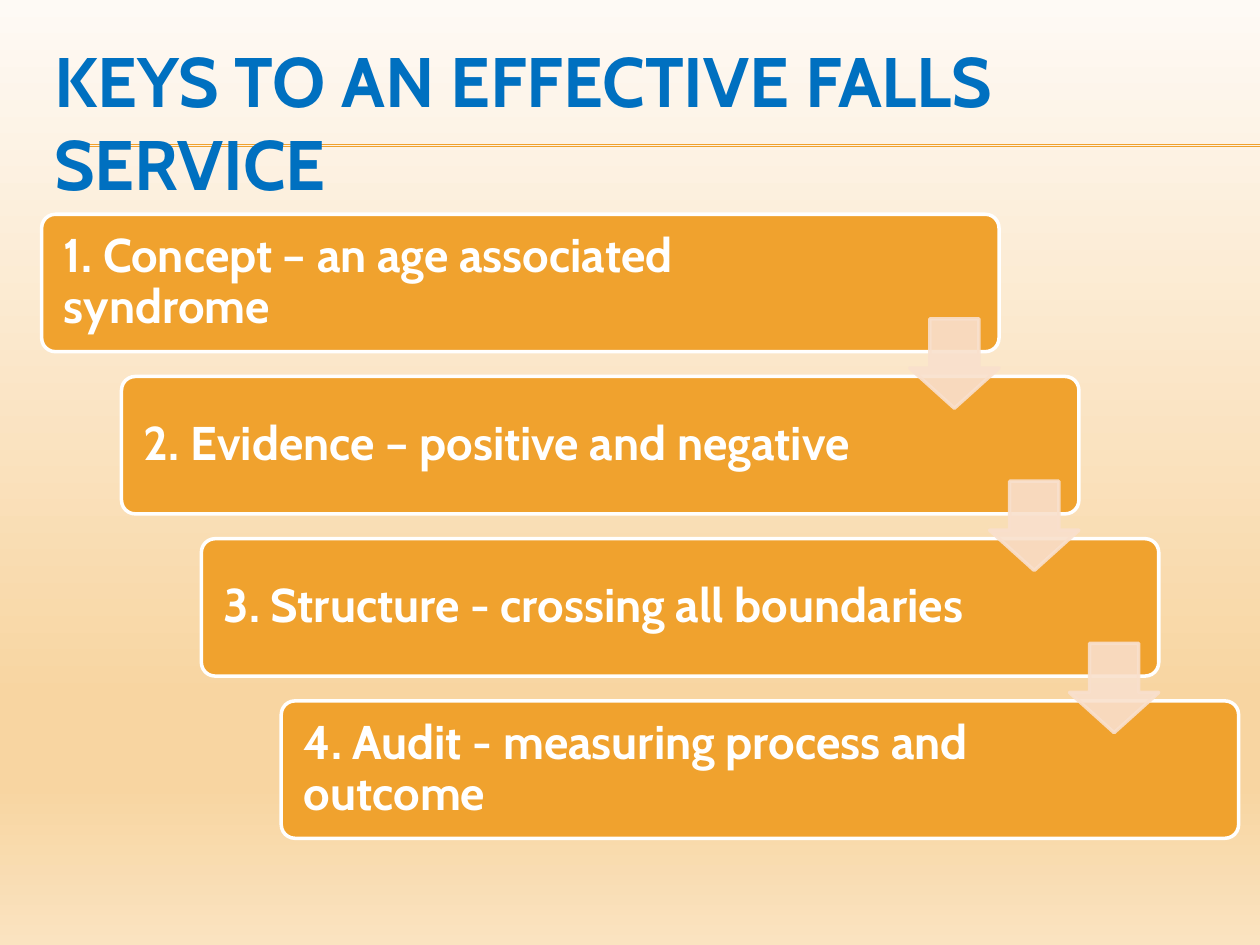
from lxml import etree
from pptx import Presentation
from pptx.dml.color import RGBColor
from pptx.enum import shapes, text
from pptx.oxml import ns
from pptx.util import Cm, Pt

TITLE = "KEYS TO AN EFFECTIVE FALLS SERVICE"
KEYS = [
    "1. Concept – an age associated syndrome",
    "2. Evidence – positive and negative",
    "3. Structure - crossing all boundaries",
    "4. Audit - measuring process and outcome",
]
BACKDROP = [(0, "FEFAF5"), (74, "F8D5A1"), (83, "F8D5A1"), (100, "FAE3C0")]
ORANGE, PEACH, BLUE, WHITE = "F0A22E", "F9E0CD", "0070C0", "FFFFFF"

SLIDE_W, SLIDE_H = 25.4, 19.05
RULE_LEFT, RULE_TOPS = 1.42, (2.92, 2.95)
STEP_LEFT, STEP_TOP = 0.84, 4.32
STEP_W, STEP_H = 19.3, 2.77
SHIFT_X, SHIFT_Y = 1.61, 3.27
ARROW, ARROW_DROP = 1.8, 2.11


def color(value):
    return RGBColor.from_string(value)


def add_child(parent, tag, **attributes):
    return etree.SubElement(parent, ns.qn(tag), attributes)


def paint_backdrop(slide):
    fill = slide.background.fill
    fill.gradient()
    fill.gradient_angle = 270
    stops = next(slide.element.iter(ns.qn("a:gsLst")))
    for stop in list(stops):
        stops.remove(stop)
    for position, value in BACKDROP:
        stop = add_child(stops, "a:gs", pos=str(position * 1000))
        add_child(stop, "a:srgbClr", val=value)


def add_rule(slide, top):
    rule = slide.shapes.add_connector(
        shapes.MSO_CONNECTOR.STRAIGHT, Cm(RULE_LEFT), Cm(top), Cm(SLIDE_W), Cm(top))
    rule.line.color.rgb = color(ORANGE)
    rule.line.width = Pt(0.75)
    add_child(rule._element.spPr, "a:effectLst")


def write(holder, words, size, value, frame_format, paragraph_format):
    frame = holder.text_frame
    paragraph = frame.paragraphs[0]
    run = paragraph.add_run()
    run.text = words
    run.font.color.rgb = color(value)
    font_format = dict(name="Cabin", size=Pt(size), bold=True)
    frame_format = dict(
        word_wrap=True, vertical_anchor=text.MSO_ANCHOR.MIDDLE, **frame_format)
    paragraph_format = dict(alignment=text.PP_ALIGN.LEFT, **paragraph_format)
    for target, settings in (
            (frame, frame_format), (paragraph, paragraph_format), (run.font, font_format)):
        for key, setting in settings.items():
            setattr(target, key, setting)


def add_block(slide, kind, box, adjustments, fill, line):
    block = slide.shapes.add_shape(kind, *map(Cm, box))
    block.shadow.inherit = False
    for index, adjustment in enumerate(adjustments):
        block.adjustments[index] = adjustment
    block.fill.solid()
    block.fill.fore_color.rgb = color(fill)
    block.line.color.rgb = color(line)
    block.line.width = Pt(2)
    return block


def main():
    deck = Presentation()
    deck.slide_width, deck.slide_height = Cm(SLIDE_W), Cm(SLIDE_H)
    slide = deck.slides.add_slide(deck.slide_layouts[6])
    paint_backdrop(slide)
    for top in RULE_TOPS:
        add_rule(slide, top)

    heading = slide.shapes.add_textbox(Cm(0.84), Cm(1.27), Cm(24.13), Cm(2.34))
    write(heading, TITLE, 40, BLUE, {}, {})

    corners = [(STEP_LEFT + i * SHIFT_X, STEP_TOP + i * SHIFT_Y) for i in range(len(KEYS))]
    insets = dict(margin_left=Cm(0.37), margin_right=Cm(3.76),
                  margin_top=Cm(0.37), margin_bottom=Cm(0.37))
    for (left, top), key in zip(corners, KEYS):
        step = add_block(slide, shapes.MSO_SHAPE.ROUNDED_RECTANGLE,
                         (left, top, STEP_W, STEP_H), [0.1], ORANGE, WHITE)
        write(step, key, 27, WHITE, insets, dict(line_spacing=0.9))

    for left, top in corners[:-1]:
        box = (left + STEP_W - ARROW, top + ARROW_DROP, ARROW, ARROW)
        arrow = add_block(slide, shapes.MSO_SHAPE.DOWN_ARROW, box, [0.45, 0.55], PEACH, PEACH)
        arrow.adjustments[0], arrow.adjustments[1] = 0.55, 0.45
        for tint in arrow._element.spPr.iter(ns.qn("a:srgbClr")):
            add_child(tint, "a:alpha", val="90000")

    deck.save("out.pptx")


if __name__ == "__main__":
    main()
